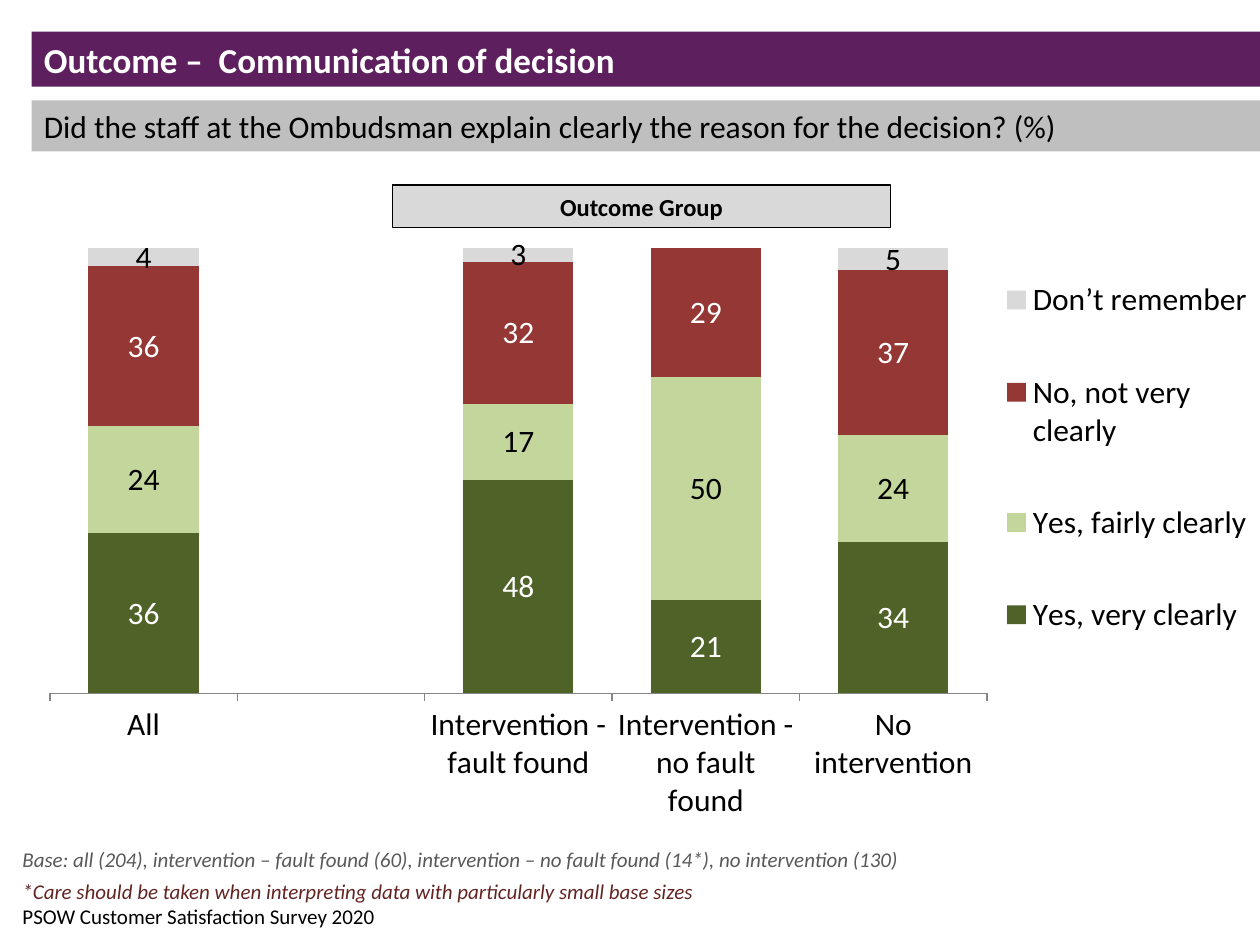
from dataclasses import dataclass

from lxml.etree import SubElement
from pptx import Presentation
from pptx.chart.data import CategoryChartData
from pptx.dml.color import RGBColor
from pptx.enum.chart import XL_CHART_TYPE, XL_LEGEND_POSITION, XL_TICK_MARK
from pptx.enum.shapes import MSO_SHAPE
from pptx.enum.text import MSO_ANCHOR, PP_ALIGN
from pptx.oxml.ns import qn
from pptx.util import Pt


@dataclass(frozen=True)
class Theme:
    font: str = "Calibri"
    title_size: int = 20
    body_size: int = 18
    group_size: int = 14
    note_size: int = 12
    black: str = "000000"
    white: str = "FFFFFF"
    purple: str = "5D1F5E"
    grey: str = "BFBFBF"
    pale_grey: str = "D9D9D9"
    axis_grey: str = "868686"
    base_grey: str = "595959"
    caution_red: str = "632523"
    dark_green: str = "4F6228"
    light_green: str = "C3D69B"
    red: str = "953735"


THEME = Theme()

CATEGORIES = ["All", " ", "Intervention - fault found",
              "Intervention - no fault found", "No intervention"]
# Answer, percentages, bar colour, label colour
ANSWERS = [
    ("Yes, very clearly", (36, None, 48, 21, 34), THEME.dark_green, THEME.white),
    ("Yes, fairly clearly", (24, None, 17, 50, 24), THEME.light_green, THEME.black),
    ("No, not very clearly", (36, None, 32, 29, 37), THEME.red, THEME.white),
    ("Don’t remember", (4, None, 3, None, 5), THEME.pale_grey, THEME.black),
]


def points(box):
    return [Pt(length) for length in box]


def style_font(font, size, color, bold=False, italic=False):
    font.name = THEME.font
    font.size = Pt(size)
    font.color.rgb = RGBColor.from_string(color)
    font.bold = bold
    font.italic = italic


def write(frame, text, size, color, align=PP_ALIGN.LEFT, **style):
    frame.word_wrap = True
    frame.text = text
    paragraph = frame.paragraphs[0]
    paragraph.alignment = align
    style_font(paragraph.runs[0].font, size, color, **style)


def add_banner(slide, box, fill, text, size, color, outlined=False, **style):
    banner = slide.shapes.add_shape(MSO_SHAPE.RECTANGLE, *points(box))
    banner.shadow.inherit = False
    banner.fill.solid()
    banner.fill.fore_color.rgb = RGBColor.from_string(fill)
    if outlined:
        banner.line.color.rgb = RGBColor.from_string(THEME.black)
        banner.line.width = Pt(0.75)
    else:
        banner.line.fill.background()
    banner.text_frame.vertical_anchor = MSO_ANCHOR.MIDDLE
    write(banner.text_frame, text, size, color, **style)


def add_note(slide, box, text, color, italic=False):
    note = slide.shapes.add_textbox(*points(box))
    write(note.text_frame, text, THEME.note_size, color, italic=italic)


def set_layout(element, x, y, w, h, inner=False):
    """Place a plot area or legend by fractions of the chart."""
    layout = element.find(qn("c:layout"))
    if layout is None:
        layout = SubElement(element, qn("c:layout"))
        anchor = element.find(qn("c:legendPos"))
        if anchor is not None:
            anchor.addnext(layout)
        else:
            element.insert(0, layout)
    manual = SubElement(layout, qn("c:manualLayout"))
    settings = [("layoutTarget", "inner")] if inner else []
    settings += [("xMode", "edge"), ("yMode", "edge"),
                 ("x", x), ("y", y), ("w", w), ("h", h)]
    for tag, value in settings:
        SubElement(manual, qn(f"c:{tag}")).set("val", str(value))


def add_answer_chart(slide, box):
    data = CategoryChartData()
    data.categories = CATEGORIES
    for answer, values, _, _ in ANSWERS:
        data.add_series(answer, values)
    chart = slide.shapes.add_chart(
        XL_CHART_TYPE.COLUMN_STACKED_100, *points(box), data).chart
    chart.has_title = False
    style_font(chart.font, THEME.body_size, THEME.black)

    # Axes
    chart.value_axis.visible = False
    chart.value_axis.has_major_gridlines = False
    outcome_axis = chart.category_axis
    outcome_axis.major_tick_mark = XL_TICK_MARK.OUTSIDE
    outcome_axis.format.line.color.rgb = RGBColor.from_string(THEME.axis_grey)
    style_font(outcome_axis.tick_labels.font, THEME.body_size, THEME.black)

    # Bars and their labels
    plot = chart.plots[0]
    plot.gap_width = 70
    plot.overlap = 100
    plot.vary_by_categories = False
    for series, (_, _, bar_color, label_color) in zip(plot.series, ANSWERS):
        series.format.fill.solid()
        series.format.fill.fore_color.rgb = RGBColor.from_string(bar_color)
        series.data_labels.show_value = True
        style_font(series.data_labels.font, THEME.body_size, label_color)

    # Legend and placing
    chart.has_legend = True
    legend = chart.legend
    legend.position = XL_LEGEND_POSITION.RIGHT
    legend.include_in_layout = False
    style_font(legend.font, THEME.body_size, THEME.black)
    plot_area = chart.element.find(f".//{qn('c:plotArea')}")
    legend_area = chart.element.find(f".//{qn('c:legend')}")
    set_layout(plot_area, 0.016, 0.095, 0.762, 0.713, inner=True)
    set_layout(legend_area, 0.79, 0.06, 0.21, 0.74)


def main():
    deck = Presentation()
    deck.slide_width, deck.slide_height = Pt(720), Pt(540)
    slide = deck.slides.add_slide(deck.slide_layouts[6])

    # Source line
    add_note(slide, (5.76, 512.6, 378, 21.6),
             "PSOW Customer Satisfaction Survey 2020", THEME.black)

    # Title and question
    add_banner(slide, (18, 18, 702, 31.5), THEME.purple,
               "Outcome –  Communication of decision",
               THEME.title_size, THEME.white, bold=True)
    add_banner(slide, (18, 57.4, 702, 29.1), THEME.grey,
               "Did the staff at the Ombudsman explain clearly the reason "
               "for the decision? (%)", THEME.body_size, THEME.black)

    # Answers by outcome
    add_answer_chart(slide, (17.28, 108, 702.72, 360))
    add_banner(slide, (224.4, 105.8, 284.4, 24.3), THEME.pale_grey,
               "Outcome Group", THEME.group_size, THEME.black,
               outlined=True, align=PP_ALIGN.CENTER, bold=True)

    # Base sizes and caution
    add_note(slide, (5.76, 480.24, 576, 21.6),
             "Base: all (204), intervention – fault found (60), intervention – "
             "no fault found (14*), no intervention (130)",
             THEME.base_grey, italic=True)
    add_note(slide, (5.76, 498.24, 414.72, 21.6),
             "*Care should be taken when interpreting data with particularly "
             "small base sizes", THEME.caution_red, italic=True)

    deck.save("out.pptx")


if __name__ == "__main__":
    main()
